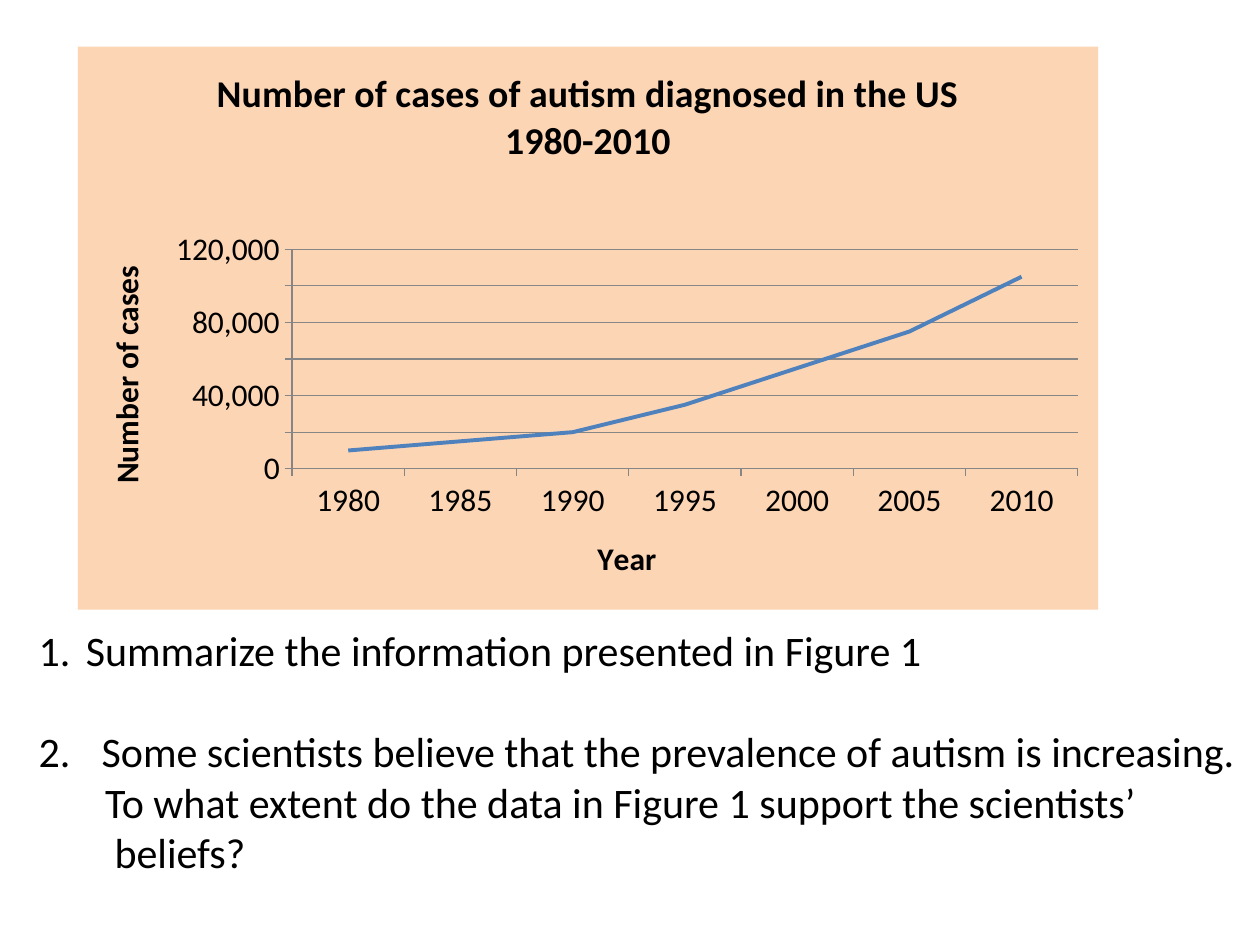
from lxml import etree
from pptx import Presentation
from pptx.chart.data import CategoryChartData
from pptx.dml.color import RGBColor
from pptx.enum.chart import XL_CHART_TYPE, XL_TICK_MARK
from pptx.oxml import parse_xml
from pptx.oxml.ns import nsdecls, qn
from pptx.util import Cm, Pt

LINE = XL_CHART_TYPE.LINE
OUT = XL_TICK_MARK.OUTSIDE
FONT = "Calibri"
BLACK, GREY, BLUE, PEACH = "000000", "868686", "4F81BD", "FCD5B5"


def rgb(code):
    return RGBColor.from_string(code)


class Board:
    def __init__(self, deck):
        self.slide = deck.slides.add_slide(deck.slide_layouts[6])

    def style(self, font, size, bold=False):
        font.name, font.size, font.bold = FONT, Pt(size), bold
        font.color.rgb = rgb(BLACK)

    def text(self, frame, lines, size, bold=False):
        """Put one line in each paragraph and return the paragraphs."""
        for i, line in enumerate(lines):
            par = frame.add_paragraph() if i else frame.paragraphs[0]
            run = par.add_run()
            run.text = line
            self.style(run.font, size, bold)
        return frame.paragraphs

    def tasks(self, box, items):
        """Items are (text, left indent in cm, number or None, points before)."""
        frame = self.slide.shapes.add_textbox(*map(Cm, box)).text_frame
        frame.word_wrap = True
        pars = self.text(frame, [item[0] for item in items], 24)
        for par, (_, left, num, gap) in zip(pars, items):
            par.space_before = Pt(gap)
            props = par._p.get_or_add_pPr()
            props.set("marL", str(Cm(left)))
            if num:
                props.set("indent", str(-Cm(left)))
                font = etree.SubElement(props, qn("a:buFont"))
                font.set("typeface", FONT)
                mark = etree.SubElement(props, qn("a:buAutoNum"))
                mark.set("type", "arabicPeriod")
                mark.set("startAt", str(num))

    def axis(self, axis, title):
        self.text(axis.axis_title.text_frame, [title], 18, True)
        self.style(axis.tick_labels.font, 18)
        axis.major_tick_mark = OUT
        self.rule(axis.format.line, GREY, 0.75)

    def rule(self, line, color, width):
        line.color.rgb = rgb(color)
        line.width = Pt(width)

    def place(self, chart, **parts):
        """Fix the inner plot area as fractions of the chart."""
        tags = "".join(f'<c:{k} val="{v}"/>' for k, v in parts.items())
        plot = chart._chartSpace.chart.plotArea
        for old in plot.findall(qn("c:layout")):
            plot.remove(old)
        plot.insert(0, parse_xml(
            f'<c:layout {nsdecls("c")}><c:manualLayout>'
            '<c:layoutTarget val="inner"/><c:xMode val="edge"/>'
            f'<c:yMode val="edge"/>{tags}</c:manualLayout></c:layout>'))

    def fill(self, chart, color):
        props = parse_xml(
            f'<c:spPr {nsdecls("c", "a")}><a:solidFill><a:srgbClr val="{color}"/>'
            '</a:solidFill><a:ln><a:noFill/></a:ln></c:spPr>')
        chart._chartSpace.chart.addnext(props)

    def graph(self, box, title, years, cases):
        data = CategoryChartData(number_format="#,##0")
        data.categories = years
        data.add_series("Series 1", cases)
        chart = self.slide.shapes.add_chart(LINE, *map(Cm, box), data).chart
        self.style(chart.font, 18)
        chart.has_legend = False
        self.text(chart.chart_title.text_frame, title, 21.6, True)
        self.fill(chart, PEACH)
        self.place(chart, x=0.21, y=0.36, w=0.77, h=0.39)

        self.axis(chart.category_axis, "Year")
        scale = chart.value_axis
        self.axis(scale, "Number of cases")
        scale.minimum_scale, scale.maximum_scale = 0, 120000
        scale.major_unit = 20000
        scale.tick_labels.number_format = "#,##0"
        scale.tick_labels.number_format_is_linked = False
        self.rule(scale.major_gridlines.format.line, GREY, 0.75)

        chart.plots[0].vary_by_categories = False
        curve = chart.plots[0].series[0]
        curve.smooth = False
        self.rule(curve.format.line, BLUE, 2.25)


def main():
    deck = Presentation()
    deck.slide_width, deck.slide_height = Cm(25.4), Cm(19.05)
    board = Board(deck)
    board.tasks((0.53, 12.47, 24.87, 8.46), [
        ("Summarize the information presented in Figure 1", 0.95, 1, 0),
        ("Some scientists believe that the prevalence of autism is increasing.",
         1.27, 2, 29),
        ("To what extent do the data in Figure 1 support the scientists’",
         1.34, None, 0),
        ("beliefs?", 1.53, None, 0),
    ])
    board.graph(
        (1.57, 0.94, 20.57, 11.35),
        ["Number of cases of autism diagnosed in the US", "1980-2010"],
        [str(year) for year in range(1980, 2011, 5)],
        [10000, 15000, 20000, 35000, 55000, 75000, 105000])
    deck.save("out.pptx")


if __name__ == "__main__":
    main()
